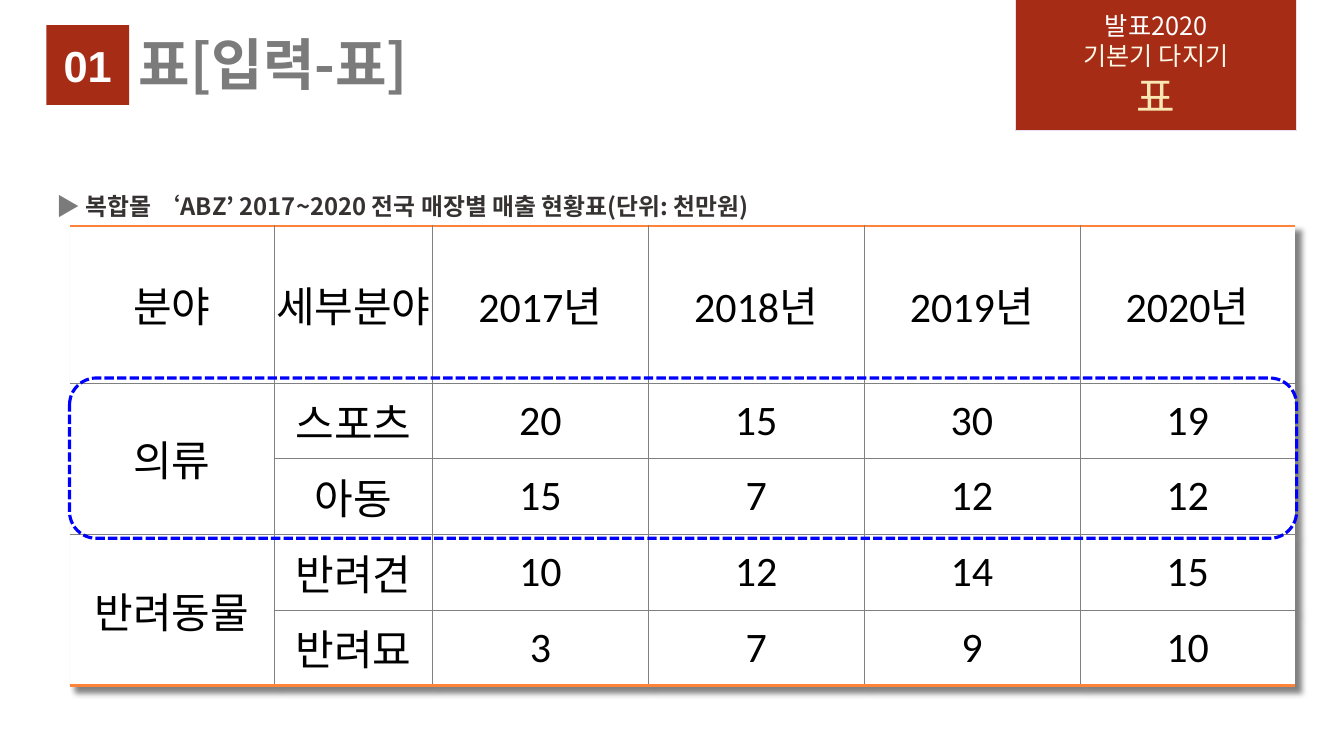
from lxml import etree
from pptx import Presentation
from pptx.dml.color import RGBColor
from pptx.enum.dml import MSO_LINE
from pptx.enum.shapes import MSO_SHAPE
from pptx.enum.text import MSO_ANCHOR, MSO_AUTO_SIZE, PP_ALIGN
from pptx.oxml.ns import qn
from pptx.util import Inches, Pt

RECT, ROUNDED = MSO_SHAPE.RECTANGLE, MSO_SHAPE.ROUNDED_RECTANGLE
SYS_DASH = MSO_LINE.SQUARE_DOT
MIDDLE, CENTER = MSO_ANCHOR.MIDDLE, PP_ALIGN.CENTER
GROW = MSO_AUTO_SIZE.SHAPE_TO_FIT_TEXT
KOREAN = "Noto Sans CJK KR"
RED, GRAY, ORANGE, GRID = "A62C16", "7B7B7B", "FF843A", "808080"
COLUMN_WIDTHS = [2.03, 1.57] + [2.14] * 4
ROW_HEIGHTS = [1.56] + [0.75] * 4
SALES = [
    ["분야", "세부분야", "2017년", "2018년", "2019년", "2020년"],
    ["의류", "스포츠", "20", "15", "30", "19"],
    ["", "아동", "15", "7", "12", "12"],
    ["반려동물", "반려견", "10", "12", "14", "15"],
    ["", "반려묘", "3", "7", "9", "10"],
]


def rgb(value):
    """Turn a hex string into a colour."""
    return RGBColor.from_string(value)


def apply(target, formats):
    """Set each attribute in formats on target."""
    for key, value in formats.items():
        setattr(target, key, value)


def write(paragraph, text, size, color, bold=False, font=KOREAN):
    """Add a run with its font to a paragraph."""
    run = paragraph.add_run()
    run.text = text
    apply(run.font, {"size": Pt(size), "bold": bold, "name": font})
    run.font.color.rgb = rgb(color)
    east_asian = etree.SubElement(run.font._element, qn("a:ea"))
    east_asian.set("typeface", KOREAN)


def add_block(slide, kind, box, fill=None, line=None, width=0.75):
    """Add a shape without shadow in the given box."""
    block = slide.shapes.add_shape(kind, *map(Inches, box))
    block.shadow.inherit = False
    if fill:
        block.fill.solid()
        block.fill.fore_color.rgb = rgb(fill)
    else:
        block.fill.background()
    if line:
        block.line.color.rgb = rgb(line)
        block.line.width = Pt(width)
    else:
        block.line.fill.background()
    apply(block.text_frame, {"word_wrap": True, "vertical_anchor": MIDDLE})
    return block


def add_line_of_text(slide, box, runs, size, spacing, formats):
    """Add a bold text box of coloured runs in the given box."""
    frame = slide.shapes.add_textbox(*map(Inches, box)).text_frame
    apply(frame, {"word_wrap": True, "auto_size": GROW, **formats})
    paragraph = frame.paragraphs[0]
    paragraph.line_spacing = spacing
    for text, color in runs:
        write(paragraph, text, size, color, bold=True)


def add_banner(slide, box):
    """Add the course banner."""
    frame = add_block(slide, RECT, box, RED, "EBDEF1").text_frame
    lines = [("발표2020", 18, "FFFFFF"), ("기본기 다지기", 18, "FDF7E6"), ("표", 30, "F9E7B4")]
    for index, (text, size, color) in enumerate(lines):
        paragraph = frame.add_paragraph() if index else frame.paragraphs[0]
        paragraph.alignment = CENTER
        write(paragraph, text, size, color)


def add_heading(slide, box):
    """Add the section number and the title to its right."""
    left, top, width, height = box
    number_width = 0.82
    title_box = (left + number_width, top + 0.07, width - number_width, 0.7)
    add_line_of_text(slide, title_box, [("표[입력-표]", GRAY)], 40, 0.9, {})
    number = add_block(slide, RECT, (left, top, number_width, height), RED)
    paragraph = number.text_frame.paragraphs[0]
    paragraph.alignment = CENTER
    write(paragraph, "01", 31, "FFFFFF", bold=True, font="Arial")


def add_caption(slide, box):
    """Add the caption above the table."""
    runs = [("▶", GRAY), (" 복합몰 ‘ABZ’ 2017~2020 전국 매장별 매출 현황표(단위: 천만원)", "363232")]
    add_line_of_text(slide, box, runs, 17, 1.6, {"vertical_anchor": MIDDLE})


def set_borders(cell, borders):
    """Draw cell borders given as (color, points), or none where missing."""
    properties = cell._tc.get_or_add_tcPr()
    for index, side in enumerate("LRTB"):
        line = etree.Element(qn(f"a:ln{side}"))
        if borders[side]:
            color, points = borders[side]
            line.set("w", str(Pt(points)))
            fill = etree.SubElement(line, qn("a:solidFill"))
            etree.SubElement(fill, qn("a:srgbClr")).set("val", color)
        else:
            etree.SubElement(line, qn("a:noFill"))
        properties.insert(index, line)


def add_table_shadow(table):
    """Give the table a soft shadow to the lower right."""
    effects = etree.Element(qn("a:effectLst"))
    shadow = etree.SubElement(effects, qn("a:outerShdw"))
    for key, value in {"blurRad": "50800", "dist": "76200", "dir": "2700000", "algn": "tl"}.items():
        shadow.set(key, value)
    color = etree.SubElement(shadow, qn("a:srgbClr"))
    color.set("val", "000000")
    etree.SubElement(color, qn("a:alpha")).set("val", "50000")
    table._tbl.tblPr.insert(0, effects)


def add_sales_table(slide, box):
    """Add the sales table and the dashed frame around the clothing rows."""
    left, top, width, height = box
    rows, columns = len(SALES), len(SALES[0])
    table = slide.shapes.add_table(rows, columns, *map(Inches, box)).table
    apply(table, {"first_row": False, "horz_banding": False})
    add_table_shadow(table)
    for column, column_width in zip(table.columns, COLUMN_WIDTHS):
        column.width = Inches(column_width)
    for row, row_height in zip(table.rows, ROW_HEIGHTS):
        row.height = Inches(row_height)
    thin, thick = (GRID, 0.25), (ORANGE, 1.79)
    margins = {f"margin_{side}": 0 for side in ("left", "right", "top", "bottom")}
    for r, values in enumerate(SALES):
        for c, value in enumerate(values):
            cell = table.cell(r, c)
            apply(cell, {"vertical_anchor": MIDDLE, **margins})
            cell.fill.solid()
            cell.fill.fore_color.rgb = rgb("FFFFFF")
            last_row = r == rows - 1 or (c == 0 and r == rows - 2)
            set_borders(cell, {
                "L": thin if c else None,
                "R": thin if c < columns - 1 else None,
                "T": thin if r else thick,
                "B": thick if last_row else thin,
            })
            if value:
                paragraph = cell.text_frame.paragraphs[0]
                paragraph.alignment = CENTER
                write(paragraph, value, 30, "000000", font="Calibri")
    for r in (1, 3):
        table.cell(r, 0).merge(table.cell(r + 1, 0))
    frame_box = (left, top + ROW_HEIGHTS[0] - 0.05, width, 1.59)
    highlight = add_block(slide, ROUNDED, frame_box, line="0000FF", width=2.25)
    highlight.adjustments[0] = 0.167
    highlight.line.dash_style = SYS_DASH


def main():
    """Build the slide and save it."""
    deck = Presentation()
    apply(deck, {"slide_width": Inches(13.33), "slide_height": Inches(7.5)})
    slide = deck.slides.add_slide(deck.slide_layouts[6])
    add_banner(slide, (10.07, 0, 2.79, 1.3))
    add_heading(slide, (0.46, 0.25, 7.61, 0.79))
    add_caption(slide, (0.46, 1.68, 7.61, 0.56))
    add_sales_table(slide, (0.69, 2.24, 12.17, 4.55))
    deck.save("out.pptx")


if __name__ == "__main__":
    main()
